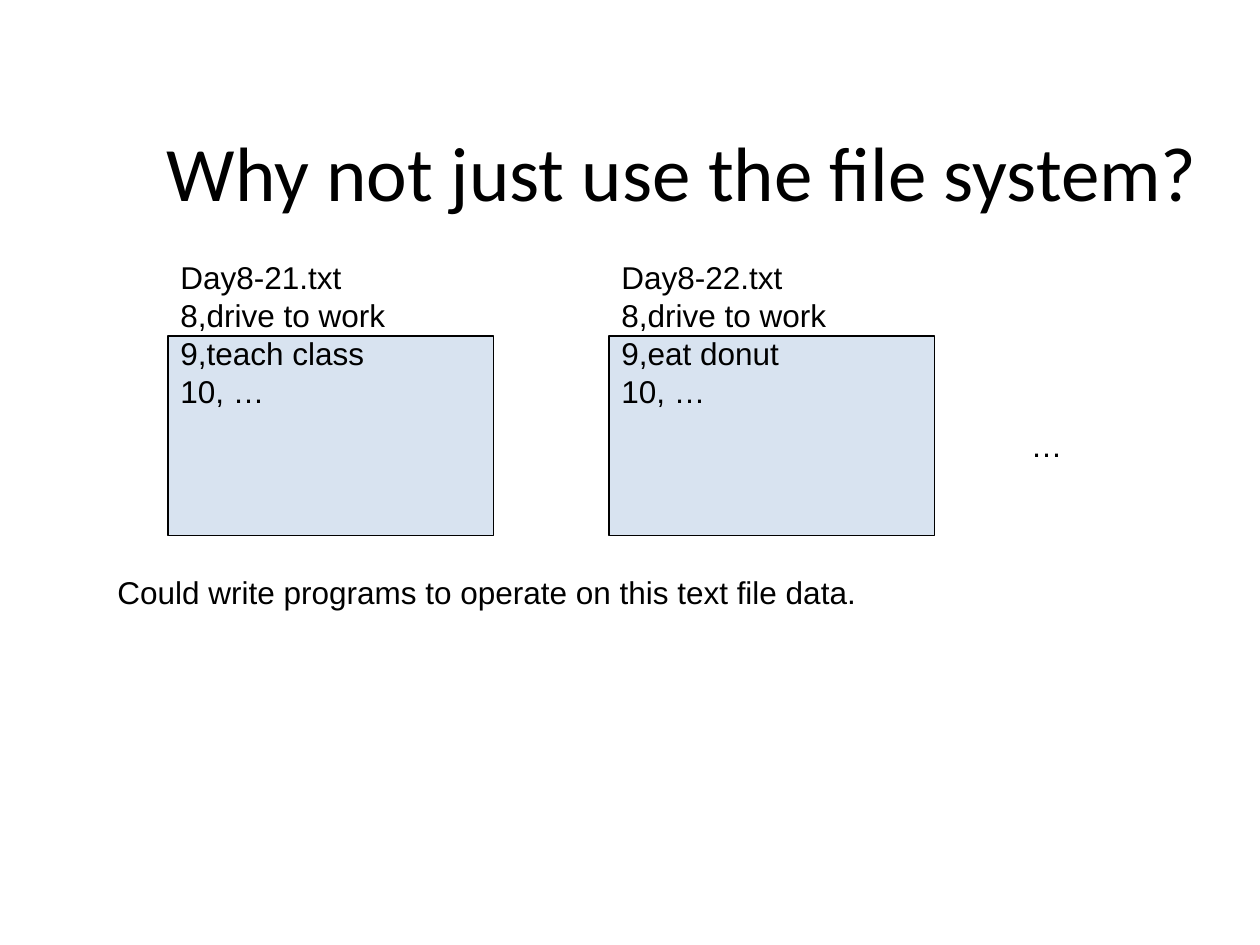
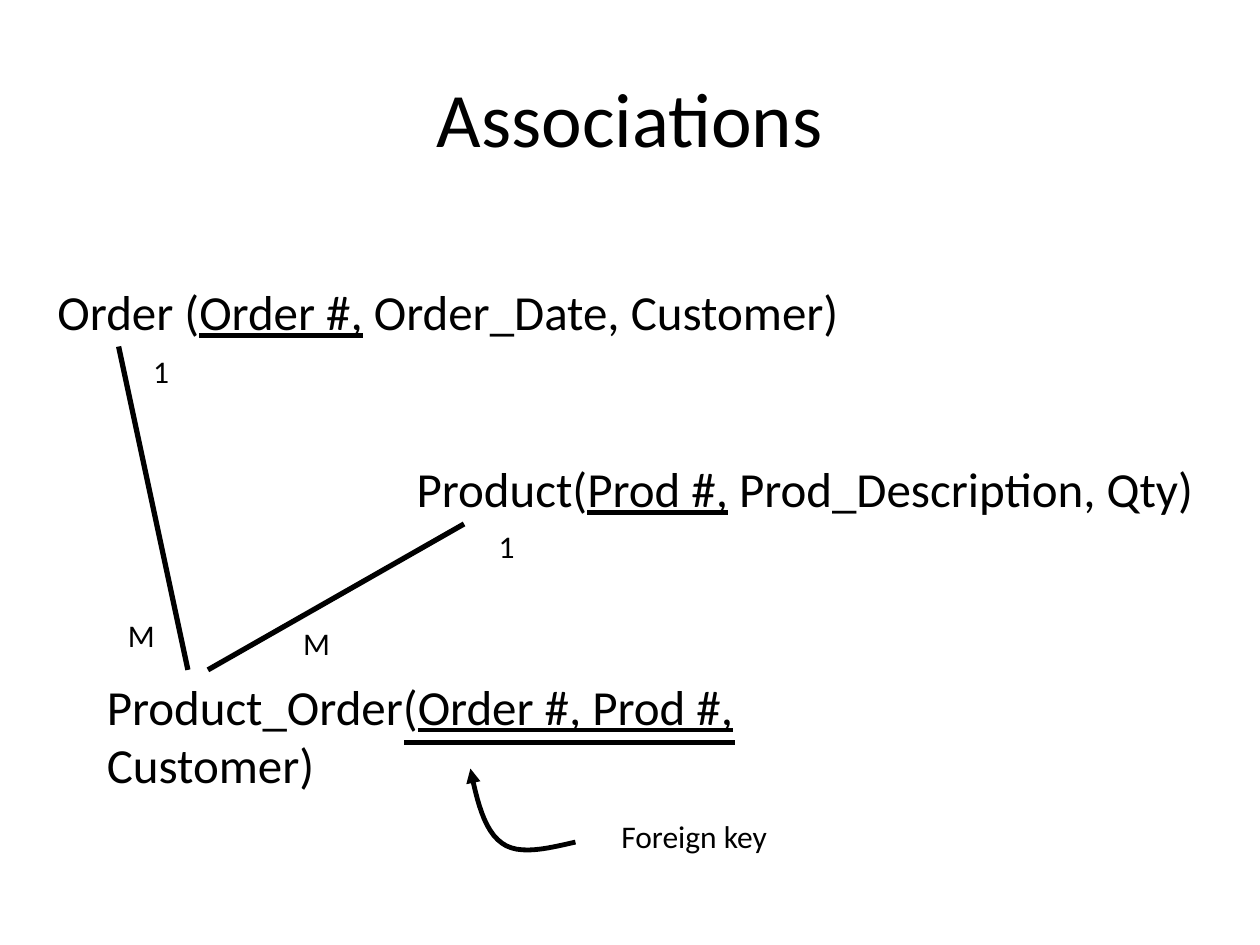
from pptx import Presentation, util as u
from pptx.dml.color import RGBColor
from pptx.enum import shapes, text
from pptx.oxml import parse_xml
from pptx.oxml.ns import nsdecls

BLACK = RGBColor(0x00, 0x00, 0x00)
BLUE = RGBColor(0x4F, 0x81, 0xBD)
COLS = 120
STEPS = 12


def write(frame, lines, size=18, font="Calibri", align=None, pitch=None):
    """Fill a frame; in each line, parts between bars are underlined."""
    for i, line in enumerate(lines):
        para = frame.paragraphs[0] if i == 0 else frame.add_paragraph()
        para.alignment = align
        para.line_spacing = pitch
        for j, part in enumerate(line.split("|")):
            run = para.add_run()
            run.text = part
            run.font.size = u.Pt(size)
            run.font.name = font
            run.font.color.rgb = BLACK
            if j % 2:
                run.font.underline = True


def bezier(a, b, c, d):
    """Points along a cubic curve, without its start."""
    for i in range(1, STEPS + 1):
        t = i / STEPS
        s = 1 - t
        yield tuple(s**3 * p + 3 * s * s * t * q + 3 * s * t * t * r + t**3 * e
                    for p, q, r, e in zip(a, b, c, d))


class Deck:
    """Places elements on a grid of 120 columns by 90 rows."""

    def __init__(self):
        self.prs = Presentation()
        self.prs.slide_width = u.Inches(10)
        self.prs.slide_height = u.Inches(7.5)
        self.unit = self.prs.slide_width / COLS
        self.slide = None

    def grid(self, *sizes):
        return [round(n * self.unit) for n in sizes]

    def page(self, title, *box):
        self.slide = self.prs.slides.add_slide(self.prs.slide_layouts[5])
        head = self.slide.shapes.title
        head.left, head.top, head.width, head.height = self.grid(*box)
        frame = head.text_frame
        frame.vertical_anchor = text.MSO_ANCHOR.MIDDLE
        write(frame, [title], size=44, align=text.PP_ALIGN.CENTER)

    def label(self, lines, x, y, w, h=6, wrap=False, **style):
        frame = self.slide.shapes.add_textbox(*self.grid(x, y, w, h)).text_frame
        frame.word_wrap = wrap
        frame.auto_size = text.MSO_AUTO_SIZE.SHAPE_TO_FIT_TEXT
        write(frame, lines, **style)

    def panel(self, *box):
        rect = self.slide.shapes.add_shape(
            shapes.MSO_SHAPE.RECTANGLE, *self.grid(*box))
        rect.shadow.inherit = False
        rect.fill.solid()
        rect.fill.fore_color.rgb = BLUE
        tint = rect.fill._xPr.solidFill[0]
        tint.append(parse_xml(f'<a:alpha {nsdecls("a")} val="22000"/>'))
        rect.line.color.rgb = BLACK
        rect.line.width = u.Pt(0.75)

    def link(self, *ends):
        line = self.slide.shapes.add_connector(
            shapes.MSO_CONNECTOR.STRAIGHT, *self.grid(*ends))
        line.line.color.rgb = BLACK
        line.line.width = u.Pt(3)
        line._element.spPr.append(parse_xml(f'<a:effectLst {nsdecls("a")}/>'))

    def arrow(self, start, *curves):
        """Draw a curved arrow; each curve is two controls and an end."""
        dots = [start]
        for curve in curves:
            dots += bezier(dots[-1], *curve)
        dots = [self.grid(*dot) for dot in dots]
        pen = self.slide.shapes.build_freeform(*dots[0])
        pen.add_line_segments(dots[1:], close=False)
        bend = pen.convert_to_shape()
        bend.shadow.inherit = False
        bend.fill.background()
        bend.line.color.rgb = BLACK
        bend.line.width = u.Pt(2.75)
        bend.line._get_or_add_ln().append(
            parse_xml(f'<a:tailEnd {nsdecls("a")} type="triangle"/>'))


def files(deck):
    deck.page("Why not just use the file system?", 11.4, 11.3, 107.2, 10)
    plain = dict(font="Arial", pitch=u.Pt(21.7))
    days = [("Day8-21.txt", "9,teach class"), ("Day8-22.txt", "9,eat donut")]
    for i, (name, task) in enumerate(days):
        x = 16 + 42 * i
        deck.panel(x, 32, 31, 19)
        deck.label([name, "8,drive to work", task, "10, …"],
                   x, 24, 36, 19.4, wrap=True, **plain)
    deck.label(["…"], 97, 40, 6.4, **plain)
    deck.label(["Could write programs to operate on this text file data."],
               10, 54, 96.2, **plain)


def links(deck):
    deck.page("Associations", 6, 3.6, 108, 15)
    tables = [
        ("Order (|Order #,| Order_Date, Customer)", 4.3, 26.2, 76.8),
        ("Product(|Prod #,| Prod_Description, Qty)", 38.5, 43.1, 76.9),
        ("Product_Order(|Order #, Prod #,| Customer)", 9, 63.8, 82.8),
    ]
    for line, x, y, w in tables:
        deck.label([line], x, y, w, 6.8, size=28)
    deck.link(11.3, 33, 17.9, 63.8)
    deck.link(44.2, 49.9, 19.8, 63.8)
    deck.link(70, 70.7, 38.5, 70.7)
    deck.label(["Foreign key"], 58, 77.2, 21.6)
    deck.arrow((54.8, 80.2),
               ((52.2, 80.8), (49.4, 81.5), (47.8, 80.3)),
               ((46.1, 79.1), (45.4, 76.2), (44.8, 73.2)))
    marks = [("1", 13.4, 32.9, 4.4), ("M", 11, 58.1, 6),
             ("M", 27.7, 58.8, 6), ("1", 46.3, 49.6, 4.4)]
    for mark, x, y, w in marks:
        deck.label([mark], x, y, w)


def main():
    deck = Deck()
    files(deck)
    links(deck)
    deck.prs.save("out.pptx")


if __name__ == "__main__":
    main()
